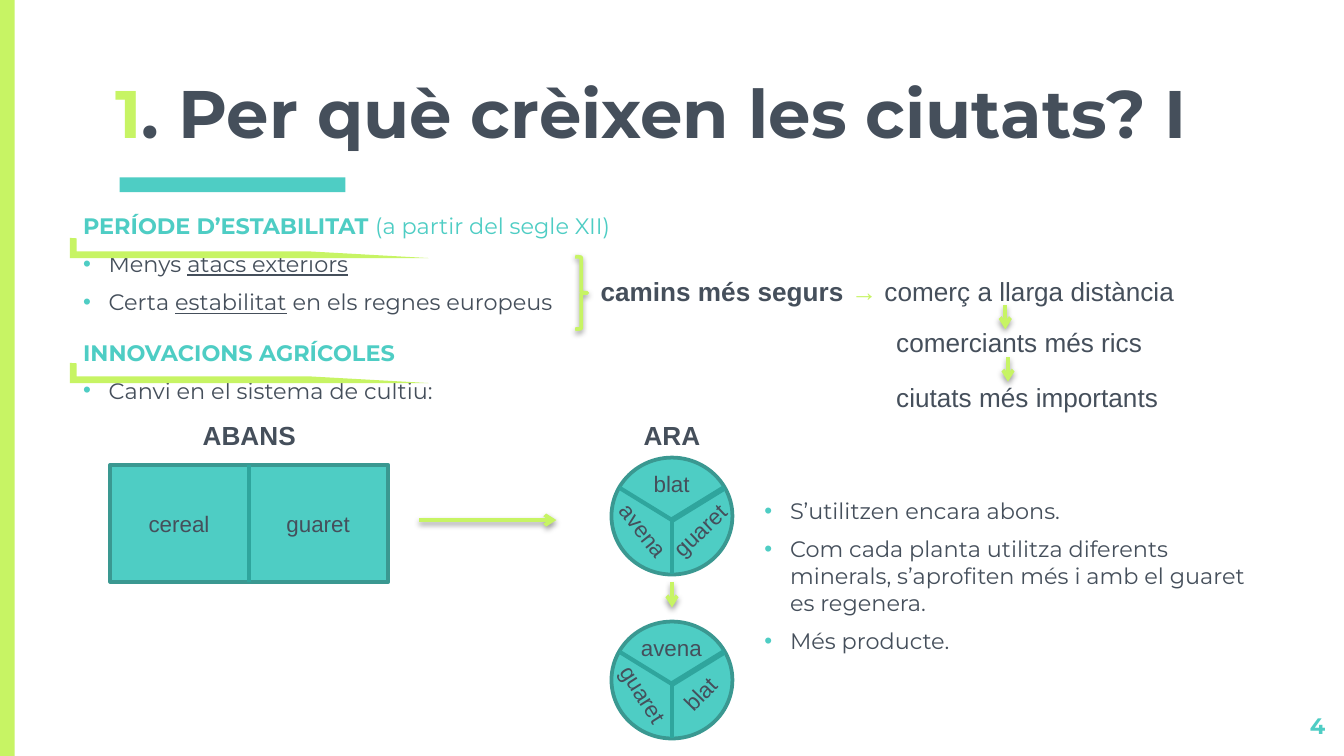
from dataclasses import dataclass
from lxml import etree
from pptx import Presentation
from pptx.dml.color import RGBColor
from pptx.enum.shapes import MSO_CONNECTOR, MSO_SHAPE
from pptx.enum.text import MSO_ANCHOR, MSO_AUTO_SIZE, PP_ALIGN
from pptx.oxml.ns import qn
from pptx.util import Inches, Pt

STRAIGHT = MSO_CONNECTOR.STRAIGHT
RECT, OVAL = MSO_SHAPE.RECTANGLE, MSO_SHAPE.OVAL
BRACE, HALF_FRAME = MSO_SHAPE.RIGHT_BRACE, MSO_SHAPE.HALF_FRAME
FIT_SHAPE = MSO_AUTO_SIZE.SHAPE_TO_FIT_TEXT
ANCHOR_BOTTOM, ALIGN_RIGHT = MSO_ANCHOR.BOTTOM, PP_ALIGN.RIGHT
TOP, BOTTOM = 0, 2


@dataclass(frozen=True)
class Theme:
    lime: str = "C7F464"
    teal: str = "4ECDC4"
    ink: str = "454F5B"
    edge: str = "3A9891"
    divider: str = "2FA59D"
    heading_font: str = "Montserrat"
    label_font: str = "Arial"
    title_size: int = 36
    label_size: int = 14
    body_size: int = 12


THEME = Theme()
WIDTH = 10
HEIGHT = WIDTH * 9 / 16

# Content: a paragraph is (has bullet, spans); a span is (text, format)
INK, TEAL, LIME = ({"color": c} for c in (THEME.ink, THEME.teal, THEME.lime))
INK_BOLD, TEAL_BOLD, LIME_BOLD = ({**f, "bold": True} for f in (INK, TEAL, LIME))
LINKED = {**INK, "underline": True}

TITLE = [(False, [("1", LIME_BOLD), (". Per què crèixen les ciutats? I", INK_BOLD)])]
STABILITY = [
    (False, [("PERÍODE D’ESTABILITAT ", TEAL_BOLD), ("(a partir del segle XII)", TEAL)]),
    (True, [("Menys ", INK), ("atacs exteriors", LINKED)]),
    (True, [("Certa ", INK), ("estabilitat", LINKED), (" en els regnes europeus", INK)]),
]
INNOVATION = [
    (False, [("INNOVACIONS AGRÍCOLES", TEAL_BOLD)]),
    (True, [("Canvi en el sistema de cultiu:", INK)]),
]
RESULTS = [(True, [(line, INK)]) for line in (
    "S’utilitzen encara abons.",
    "Com cada planta utilitza diferents minerals, s’aprofiten més i amb el guaret es regenera.",
    "Més producte.",
)]
ROADS = [(False, [("camins més segurs ", INK_BOLD), ("→", LIME),
                  (" comerç a llarga distància", INK)])]
PAGE_NUMBER = [(False, [("4", TEAL_BOLD)])]

# Heading-font blocks: paragraphs, area (left, top, width, height)
LEFT_COLUMN = 0.52
BLOCKS = [
    (STABILITY, (LEFT_COLUMN, 1.48, 4.27, 1.04)),
    (INNOVATION, (LEFT_COLUMN, 2.42, 2.91, 0.75)),
    (RESULTS, (5.59, 3.6, 3.8, 1.49)),
]
UNDERLINE_TOPS = (1.77, 2.7)

# Short labels: text, format, area
LABELS = [
    ("comerciants més rics", INK, (6.57, 2.38, 2.04, 0.34)),
    ("ciutats més importants", INK, (6.57, 2.79, 2.16, 0.34)),
    ("ABANS", INK_BOLD, (1.41, 3.07, 0.9, 0.34)),
    ("ARA", INK_BOLD, (4.69, 3.07, 0.63, 0.34)),
]
ARROWS = [
    ((7.48, 2.27), (7.48, 2.45)),
    ((7.5, 2.66), (7.5, 2.84)),
    ((3.12, 3.87), (4.14, 3.87)),
    ((5, 4.33), (5, 4.52)),
]

# Crops: the old field has two halves, each new wheel three sectors
CROP_WIDTH = {"cereal": 0.66, "guaret": 0.68, "avena": 0.66, "blat": 0.47}
CROP_HEIGHT = 0.3
FIELD = (0.82, 3.46, 2.07, 0.87)
FIELD_CROPS = ("cereal", "guaret")
WHEELS = [
    (("blat", 0), ("guaret", 316.4), ("avena", 51.6)),
    (("avena", 0), ("blat", 314.5), ("guaret", 57.7)),
]
WHEEL_X, WHEEL_Y, WHEEL_PITCH = 5, 3.84, 1.22
WHEEL_SIZE = (0.9, 0.87)
SECTORS = [(0, -0.24), (0.21, 0.1), (-0.21, 0.11)]
HUB_DROP = 0.03
SPOKES = [(-0.39, -0.21, 2.25), (0.39, -0.21, 3), (0, 0.43, 2.25)]


def rgb(color):
    return RGBColor.from_string(color)


def add_effects(shape, shadow):
    """Replace the style's shadow by a soft lower one, or by none."""
    effects = etree.SubElement(shape._element.spPr, qn("a:effectLst"))
    if shadow:
        outer = etree.SubElement(effects, qn("a:outerShdw"), blurRad=str(Pt(3.1)),
                                 dist=str(Pt(1.6)), dir="5400000", rotWithShape="0")
        black = etree.SubElement(outer, qn("a:srgbClr"), val="000000")
        etree.SubElement(black, qn("a:alpha"), val="38000")


def add_figure(page, kind, area, fill=None, line=None, shadow=False):
    shape = page.shapes.add_shape(kind, *map(Inches, area))
    if fill:
        shape.fill.solid()
        shape.fill.fore_color.rgb = rgb(fill)
    else:
        shape.fill.background()
    if line:
        shape.line.color.rgb = rgb(line)
        shape.line.width = Pt(2)
    else:
        shape.line.fill.background()
    add_effects(shape, shadow)
    return shape


def add_line(page, start, end, color, width, arrow=False):
    line = page.shapes.add_connector(STRAIGHT, *map(Inches, (*start, *end)))
    line.line.color.rgb = rgb(color)
    line.line.width = Pt(width)
    if arrow:
        etree.SubElement(line.line._get_or_add_ln(), qn("a:tailEnd"), type="arrow")
    add_effects(line, arrow)
    return line


def add_bullet(para):
    properties = para._p.get_or_add_pPr()
    properties.set("marL", str(Inches(0.19)))
    properties.set("indent", str(Inches(-0.19)))
    color = etree.SubElement(properties, qn("a:buClr"))
    etree.SubElement(color, qn("a:srgbClr"), val=THEME.teal)
    etree.SubElement(properties, qn("a:buFont"), typeface=THEME.label_font)
    etree.SubElement(properties, qn("a:buChar"), char="•")


def add_text(page, area, paragraphs, font, size, inset=0.1, before=None, align=None, **frame_format):
    box = page.shapes.add_textbox(*map(Inches, area))
    frame = box.text_frame
    margins = {"margin_left": Inches(0.1), "margin_right": Inches(0.1),
               "margin_top": Inches(inset), "margin_bottom": Inches(inset)}
    for name, value in {"word_wrap": True, **margins, **frame_format}.items():
        setattr(frame, name, value)
    for index, (bullet, spans) in enumerate(paragraphs):
        para = frame.add_paragraph() if index else frame.paragraphs[0]
        para.alignment = align
        para.space_before = before
        if bullet:
            add_bullet(para)
        for text, style in spans:
            span = para.add_run()
            span.text = text
            values = {"name": font, "size": Pt(size), "bold": False, **style}
            span.font.color.rgb = rgb(values.pop("color"))
            for name, value in values.items():
                setattr(span.font, name, value)
    return box


def add_label(page, area, text, style, size):
    return add_text(page, area, [(False, [(text, style)])], THEME.label_font, size, 0.05,
                    word_wrap=False, auto_size=FIT_SHAPE)


def add_crop(page, crop, x, y, angle=0):
    """Label a crop around its centre point."""
    width = CROP_WIDTH[crop]
    area = (x - width / 2, y - CROP_HEIGHT / 2, width, CROP_HEIGHT)
    add_label(page, area, crop, INK, THEME.body_size).rotation = angle


def add_field(page):
    left, top, width, height = FIELD
    field = add_figure(page, RECT, FIELD, THEME.teal, THEME.edge)
    middle = left + width / 2
    divider = add_line(page, (middle, top), (middle, top + height), THEME.divider, 2.25)
    divider.begin_connect(field, TOP)
    divider.end_connect(field, BOTTOM)
    for index, crop in enumerate(FIELD_CROPS):
        add_crop(page, crop, left + width * (2 * index + 1) / 4, top + height / 2)


def add_wheel(page, y, crops):
    width, height = WHEEL_SIZE
    add_figure(page, OVAL, (WHEEL_X - width / 2, y - height / 2, width, height),
               THEME.teal, THEME.edge)
    for dx, dy, weight in SPOKES:
        add_line(page, (WHEEL_X + dx, y + dy), (WHEEL_X, y + HUB_DROP), THEME.divider, weight)
    for (crop, angle), (dx, dy) in zip(crops, SECTORS):
        add_crop(page, crop, WHEEL_X + dx, y + dy, angle)


def main():
    deck = Presentation()
    deck.slide_width, deck.slide_height = Inches(WIDTH), Inches(HEIGHT)
    page = deck.slides.add_slide(deck.slide_layouts[6])

    add_figure(page, RECT, (0, 0, 0.11, HEIGHT), THEME.lime)
    add_figure(page, RECT, (0.89, 1.32, 1.68, 0.11), THEME.teal)
    add_text(page, (0.76, 0.28, 9.08, 0.95), TITLE, THEME.heading_font, THEME.title_size,
             vertical_anchor=ANCHOR_BOTTOM)
    add_text(page, (9.36, 5.2, 0.6, 0.34), PAGE_NUMBER, THEME.heading_font, THEME.body_size,
             align=ALIGN_RIGHT)
    for paragraphs, area in BLOCKS:
        add_text(page, area, paragraphs, THEME.heading_font, THEME.body_size, before=Pt(6))
    for top in UNDERLINE_TOPS:
        mark = add_figure(page, HALF_FRAME, (LEFT_COLUMN, top, 2.67, 0.15), THEME.lime)
        mark.rotation = 180
        mark._element.spPr.xfrm.set("flipH", "1")

    add_figure(page, BRACE, (4.28, 1.91, 0.09, 0.54), line=THEME.lime, shadow=True)
    add_text(page, (4.37, 2, 4.54, 0.34), ROADS, THEME.label_font, THEME.label_size, 0.05,
             auto_size=FIT_SHAPE)
    for text, style, area in LABELS:
        add_label(page, area, text, style, THEME.label_size)
    for start, end in ARROWS:
        add_line(page, start, end, THEME.lime, 2, arrow=True)

    add_field(page)
    for index, crops in enumerate(WHEELS):
        add_wheel(page, WHEEL_Y + index * WHEEL_PITCH, crops)
    deck.save("out.pptx")


if __name__ == "__main__":
    main()
